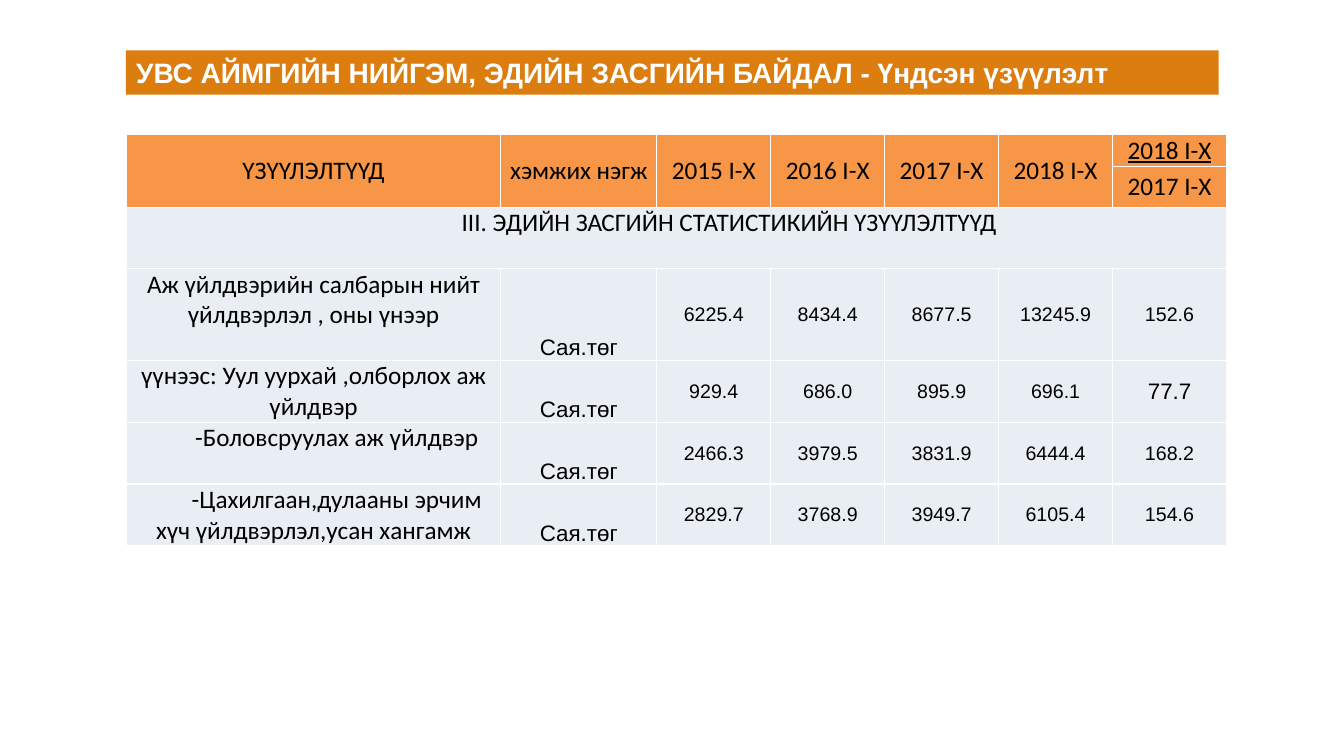
from dataclasses import dataclass

from lxml import etree
from pptx import Presentation
from pptx.dml.color import RGBColor
from pptx.enum.text import MSO_ANCHOR, MSO_AUTO_SIZE, PP_ALIGN
from pptx.oxml.ns import qn
from pptx.util import Pt

TOP, MID, LOW = MSO_ANCHOR.TOP, MSO_ANCHOR.MIDDLE, MSO_ANCHOR.BOTTOM
LEFT, MIDDLE, JUSTIFY = PP_ALIGN.LEFT, PP_ALIGN.CENTER, PP_ALIGN.JUSTIFY
FIT_NONE = MSO_AUTO_SIZE.NONE


@dataclass(frozen=True)
class Theme:
    band: RGBColor = RGBColor(0xDC, 0x7D, 0x0F)
    head: RGBColor = RGBColor(0xF7, 0x96, 0x46)
    body: RGBColor = RGBColor(0xE9, 0xED, 0xF4)
    ink: RGBColor = RGBColor(0, 0, 0)
    white: RGBColor = RGBColor(0xFF, 0xFF, 0xFF)
    title: int = 20
    label: int = 18
    unit: int = 16
    value: int = 14
    sans: str = "Arial"
    text: str = "Calibri"


THEME = Theme()
COLS = [267.4, 111.5] + [81.4] * 5
ROWS = [23, 29, 44, 65.5, 44, 44, 44]
HEADS = ["ҮЗҮҮЛЭЛТҮҮД", "хэмжих нэгж",
         "2015 I-X", "2016 I-X", "2017 I-X", "2018 I-X"]
UNIT = "Сая.төг"
# label, first-line indent, anchor, values
DATA = [
    ("Аж үйлдвэрийн салбарын нийт үйлдвэрлэл , оны үнээр", 0, TOP,
     ["6225.4", "8434.4", "8677.5", "13245.9", "152.6"]),
    ("үүнээс: Уул уурхай ,олборлох аж үйлдвэр", 0, LOW,
     ["929.4", "686.0", "895.9", "696.1", "77.7"]),
    ("-Боловсруулах аж үйлдвэр", 33, TOP,
     ["2466.3", "3979.5", "3831.9", "6444.4", "168.2"]),
    ("-Цахилгаан,дулааны эрчим хүч үйлдвэрлэл,усан хангамж", 33, LOW,
     ["2829.7", "3768.9", "3949.7", "6105.4", "154.6"]),
]


def apply(item, values):
    for name, value in values.items():
        setattr(item, name, value)


def write(frame, text, align, color, indent=0, **font):
    para = frame.paragraphs[0]
    para.text = text
    para.alignment = align
    if indent:
        para._p.get_or_add_pPr().set("indent", str(Pt(indent)))
    face = para.runs[0].font
    apply(face, {"bold": False, **font})
    face.color.rgb = color


def add_title(slide, text):
    title = slide.shapes.title
    apply(title, {"left": Pt(90), "top": Pt(36),
                  "width": Pt(780.5), "height": Pt(31.7)})
    title.fill.solid()
    title.fill.fore_color.rgb = THEME.band
    frame = title.text_frame
    apply(frame, {"auto_size": FIT_NONE, "word_wrap": True,
                  "vertical_anchor": MID,
                  "margin_left": Pt(7.2), "margin_right": Pt(7.2),
                  "margin_top": Pt(3.6), "margin_bottom": Pt(3.6)})
    write(frame, text, JUSTIFY, THEME.white,
          size=Pt(THEME.title), name=THEME.sans, bold=True)


def paint(cell, color):
    """Give a cell its fill, thin insets and white borders."""
    props = cell._tc.get_or_add_tcPr()
    for side in ("lnL", "lnR", "lnT", "lnB"):
        line = etree.SubElement(props, qn(f"a:{side}"), w=str(Pt(1)))
        fill = etree.SubElement(line, qn("a:solidFill"))
        etree.SubElement(fill, qn("a:srgbClr"), val=str(THEME.white))
    cell.fill.solid()
    cell.fill.fore_color.rgb = color
    apply(cell, {"margin_left": Pt(0.5), "margin_right": Pt(0.5),
                 "margin_top": Pt(0.3), "margin_bottom": 0})


def put(cell, text, size, face, anchor=MID, align=MIDDLE, indent=0, **font):
    cell.vertical_anchor = anchor
    write(cell.text_frame, text, align, THEME.ink, indent,
          size=Pt(size), name=face, **font)


def add_grid(slide):
    grid = slide.shapes.add_table(
        len(ROWS), len(COLS), Pt(90.3), Pt(96),
        Pt(sum(COLS)), Pt(sum(ROWS))).table
    apply(grid, {"first_row": False, "horz_banding": False})
    for col, width in zip(grid.columns, COLS):
        col.width = Pt(width)
    for i, (row, height) in enumerate(zip(grid.rows, ROWS)):
        row.height = Pt(height)
        for cell in row.cells:
            paint(cell, THEME.head if i < 2 else THEME.body)
    return grid


def fill_heads(grid):
    style = (THEME.label, THEME.text)
    for i, text in enumerate(HEADS):
        cell = grid.cell(0, i)
        cell.merge(grid.cell(1, i))
        put(cell, text, *style)
    last = len(HEADS)
    put(grid.cell(0, last), "2018 I-X", *style, underline=True)
    put(grid.cell(1, last), "2017 I-X", *style)
    band = grid.cell(2, 0)
    band.merge(grid.cell(2, last))
    put(band, "III. ЭДИЙН ЗАСГИЙН СТАТИСТИКИЙН ҮЗҮҮЛЭЛТҮҮД", *style,
        anchor=TOP, align=LEFT, indent=239)


def fill_data(grid):
    for i, (label, indent, anchor, values) in enumerate(DATA, 3):
        put(grid.cell(i, 0), label, THEME.label, THEME.text, anchor,
            indent=indent)
        put(grid.cell(i, 1), UNIT, THEME.unit, THEME.sans, LOW)
        for j, value in enumerate(values, 2):
            size = THEME.unit if value == "77.7" else THEME.value
            put(grid.cell(i, j), value, size, THEME.sans)


def main():
    deck = Presentation()
    apply(deck, {"slide_width": Pt(960), "slide_height": Pt(540)})
    slide = deck.slides.add_slide(deck.slide_layouts.get_by_name("Title Only"))
    add_title(slide, "УВС АЙМГИЙН НИЙГЭМ, ЭДИЙН ЗАСГИЙН БАЙДАЛ"
                     " - Үндсэн үзүүлэлт")
    grid = add_grid(slide)
    fill_heads(grid)
    fill_data(grid)
    deck.save("out.pptx")


if __name__ == "__main__":
    main()
